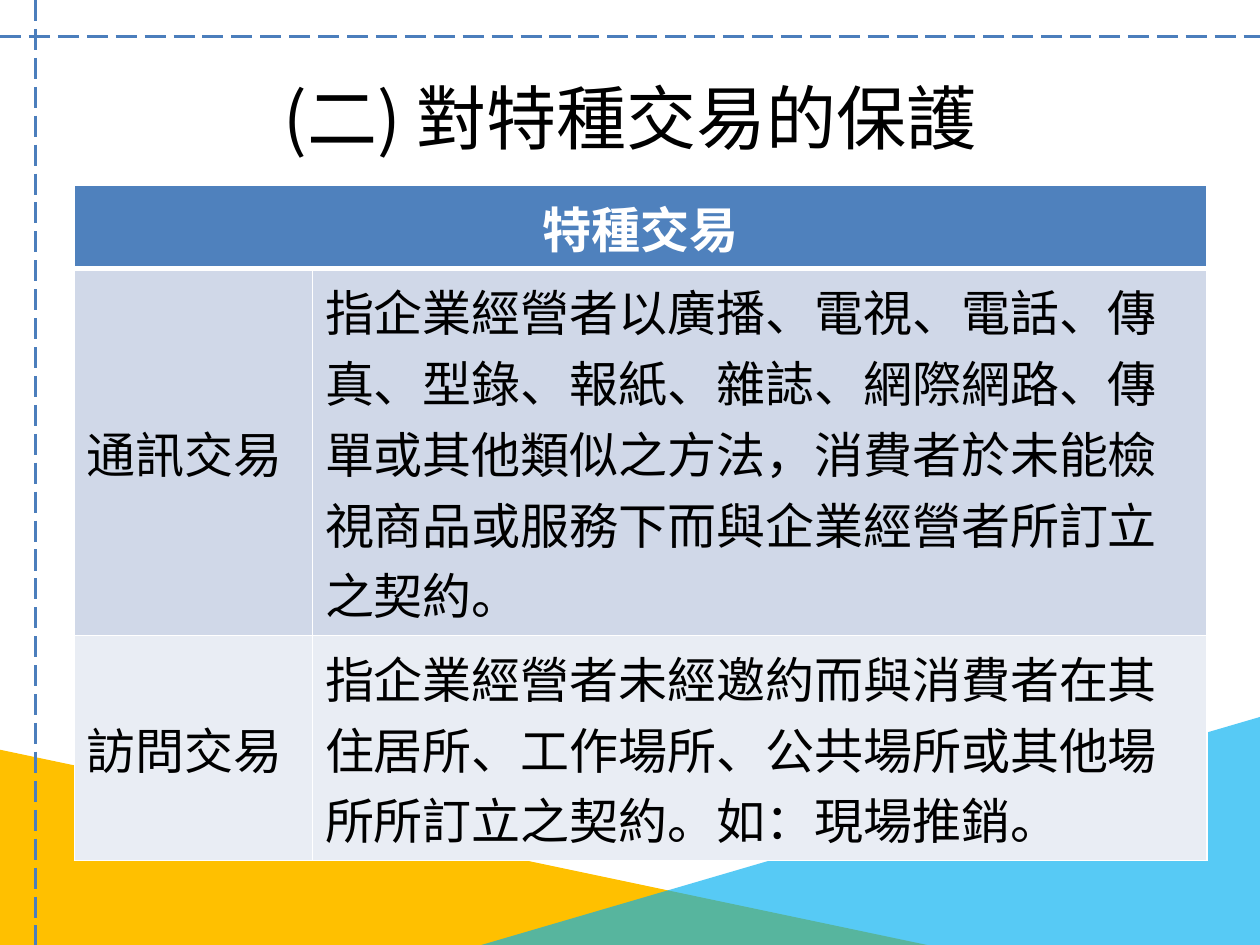
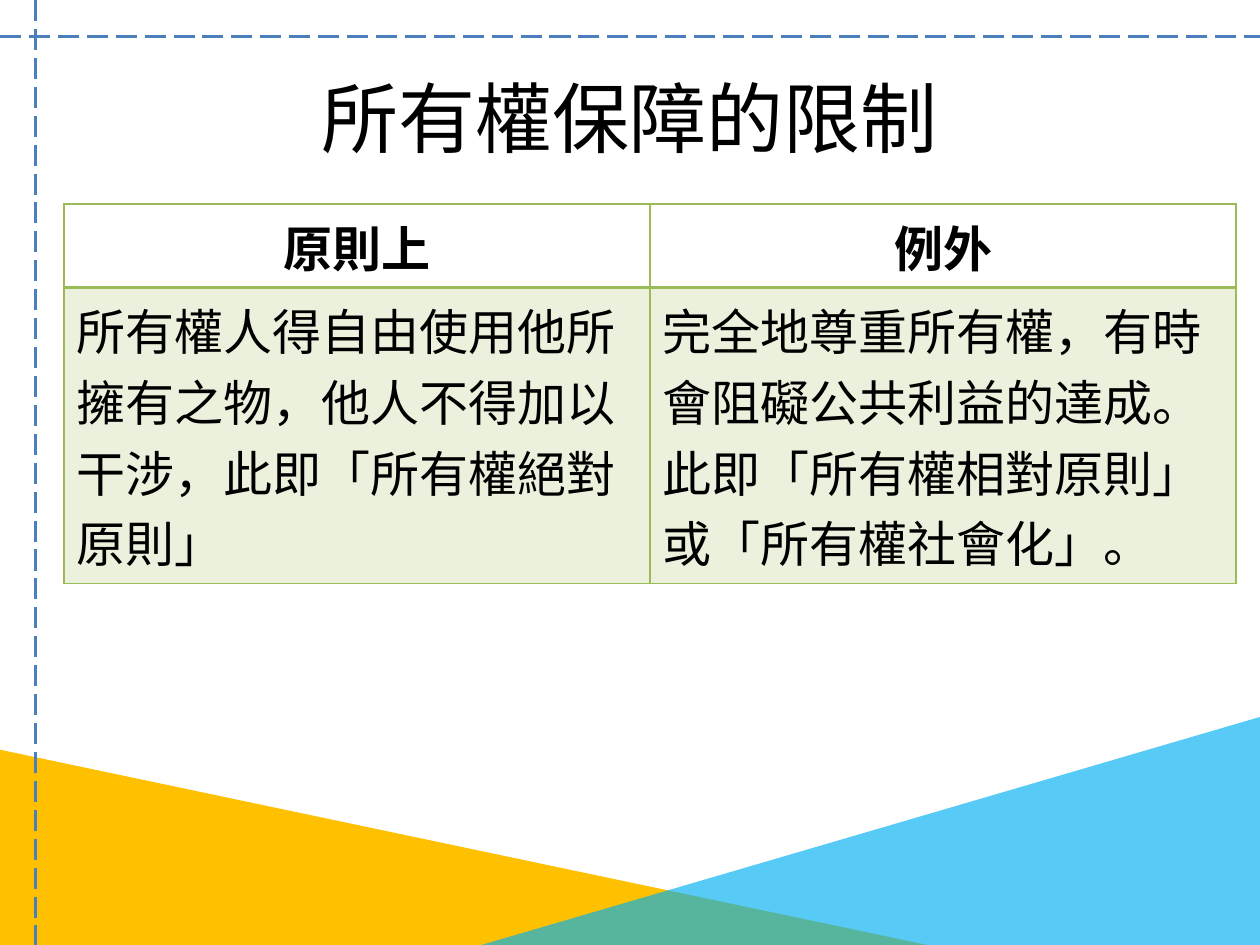
"""Build two slides on special transactions and the limits of ownership."""
from dataclasses import dataclass

from lxml import etree
from pptx import Presentation
from pptx import util as u
from pptx.dml.color import RGBColor
from pptx.enum import dml, shapes, text
from pptx.oxml.ns import qn

FONT = "Noto Sans CJK SC"
BODY_SIZE = 28
COLORS = {
    "white": "FFFFFF", "black": "000000", "gold": "FFC000", "sky": "00B0F0",
    "guide": "4B7EBC", "blue": "4F81BD", "band": "D0D8E8", "pale": "E9EDF4",
    "green": "9BBB59",
}


@dataclass(frozen=True)
class Corner:
    left: float
    top: float
    width: float
    height: float
    color: str
    opacity: int = 100
    mirrored: bool = False


@dataclass(frozen=True)
class Guide:
    start: tuple[float, float]
    end: tuple[float, float]


@dataclass(frozen=True)
class RowStyle:
    height: float
    fill: str | None
    opacity: int = 100
    heading: bool = False
    ink: str = "black"


@dataclass(frozen=True)
class Topic:
    title: str
    title_size: int
    left: float
    top: float
    columns: tuple[float, ...]
    rows: tuple[RowStyle, ...]
    texts: tuple[tuple[str, ...], ...]
    border: str
    rule: float
    side_labels: bool = False


CORNERS = (
    Corner(0, 5.95, 7.36, 1.55, "gold"),
    Corner(3.82, 5.69, 6.18, 1.81, "sky", 66, True),
)
GUIDES = (Guide((0.28, 0), (0.28, 7.5)), Guide((0, 0.29), (10, 0.29)))

TOPICS = (
    Topic(
        "(二) 對特種交易的保護", 40, 0.59, 1.47, (1.89, 7.1),
        (RowStyle(0.65, "blue", heading=True, ink="white"),
         RowStyle(2.9, "band"), RowStyle(1.78, "pale")),
        (("特種交易",),
         ("通訊交易", "指企業經營者以廣播、電視、電話、傳真、型錄、報紙、雜誌、"
          "網際網路、傳單或其他類似之方法，消費者於未能檢視商品或服務下而與"
          "企業經營者所訂立之契約。"),
         ("訪問交易", "指企業經營者未經邀約而與消費者在其住居所、工作場所、"
          "公共場所或其他場所所訂立之契約。如：現場推銷。")),
        "white", 3, side_labels=True),
    Topic(
        "所有權保障的限制", 44, 0.51, 1.62, (4.65, 4.65),
        (RowStyle(0.65, None, heading=True), RowStyle(2.34, "green", 20)),
        (("原則上", "例外"),
         ("所有權人得自由使用他所擁有之物，他人不得加以干涉，此即「所有權絕對原則」",
          "完全地尊重所有權，有時會阻礙公共利益的達成。此即「所有權相對原則」"
          "或「所有權社會化」。")),
        "green", 2),
)


def rgb(name: str) -> RGBColor:
    return RGBColor.from_string(COLORS[name])


def paint(fill, holder, color: str, opacity: int) -> None:
    fill.solid()
    fill.fore_color.rgb = rgb(color)
    if opacity < 100:
        tint = holder.find(qn("a:solidFill")).find(qn("a:srgbClr"))
        etree.SubElement(tint, qn("a:alpha"), val=str(opacity * 1000))


def write(frame, words: str, size: int, color: str, bold: bool, centred: bool) -> None:
    frame.text = words
    paragraph = frame.paragraphs[0]
    paragraph.alignment = text.PP_ALIGN.CENTER if centred else text.PP_ALIGN.LEFT
    font = paragraph.font
    font.size, font.bold, font.name = u.Pt(size), bold, FONT
    font.color.rgb = rgb(color)
    defaults = paragraph._p.pPr.find(qn("a:defRPr"))
    etree.SubElement(defaults, qn("a:ea"), typeface=FONT)


def draw_backdrop(slide) -> None:
    for corner in CORNERS:
        triangle = slide.shapes.add_shape(
            shapes.MSO_SHAPE.RIGHT_TRIANGLE, u.Inches(corner.left), u.Inches(corner.top),
            u.Inches(corner.width), u.Inches(corner.height))
        triangle.shadow.inherit = False
        triangle.line.fill.background()
        properties = triangle._element.spPr
        paint(triangle.fill, properties, corner.color, corner.opacity)
        if corner.mirrored:
            properties.find(qn("a:xfrm")).set("flipH", "1")
    for guide in GUIDES:
        dashes = slide.shapes.add_connector(
            shapes.MSO_CONNECTOR.STRAIGHT, *map(u.Inches, guide.start + guide.end))
        dashes.line.color.rgb = rgb("guide")
        dashes.line.width = u.Pt(1.5)
        dashes.line.dash_style = dml.MSO_LINE.LONG_DASH
        etree.SubElement(dashes._element.spPr, qn("a:effectLst"))


def draw_title(slide, topic: Topic) -> None:
    title = slide.shapes.title
    title.left, title.top = u.Inches(0.5), u.Inches(0.3)
    title.width, title.height = u.Inches(9), u.Inches(1.25)
    title.text_frame.vertical_anchor = text.MSO_ANCHOR.MIDDLE
    write(title.text_frame, topic.title, topic.title_size, "black", False, True)


def add_borders(cell, color: str, widths: dict[str, float]) -> None:
    properties = cell._tc.get_or_add_tcPr()
    for position, (side, width) in enumerate(widths.items()):
        edge = etree.Element(qn(f"a:ln{side}"), w=str(u.Pt(width)))
        fill = etree.SubElement(edge, qn("a:solidFill"))
        etree.SubElement(fill, qn("a:srgbClr"), val=COLORS[color])
        properties.insert(position, edge)


def draw_table(slide, topic: Topic) -> None:
    grid = slide.shapes.add_table(
        len(topic.rows), len(topic.columns), u.Inches(topic.left), u.Inches(topic.top),
        u.Inches(sum(topic.columns)), u.Inches(sum(row.height for row in topic.rows))).table
    for column, width in zip(grid.columns, topic.columns):
        column.width = u.Inches(width)
    for r, (style, words) in enumerate(zip(topic.rows, topic.texts)):
        grid.rows[r].height = u.Inches(style.height)
        if len(words) < len(topic.columns):
            grid.cell(r, 0).merge(grid.cell(r, len(topic.columns) - 1))
        for c in range(len(topic.columns)):
            cell = grid.cell(r, c)
            if style.fill:
                paint(cell.fill, cell._tc.get_or_add_tcPr(), style.fill, style.opacity)
            else:
                cell.fill.background()
            add_borders(cell, topic.border, {
                "L": 1, "R": 1, "T": topic.rule if r == 1 else 1,
                "B": topic.rule if style.heading else 1})
            if c < len(words):
                write(cell.text_frame, words[c], BODY_SIZE, style.ink,
                      style.heading, style.heading)
            if topic.side_labels and c == 0 and not style.heading:
                cell.vertical_anchor = text.MSO_ANCHOR.MIDDLE


def main() -> None:
    deck = Presentation()
    deck.slide_width, deck.slide_height = u.Inches(10), u.Inches(7.5)
    title_only = deck.slide_layouts[5]
    for topic in TOPICS:
        slide = deck.slides.add_slide(title_only)
        draw_backdrop(slide)
        draw_title(slide, topic)
        draw_table(slide, topic)
    deck.save("out.pptx")


if __name__ == "__main__":
    main()
